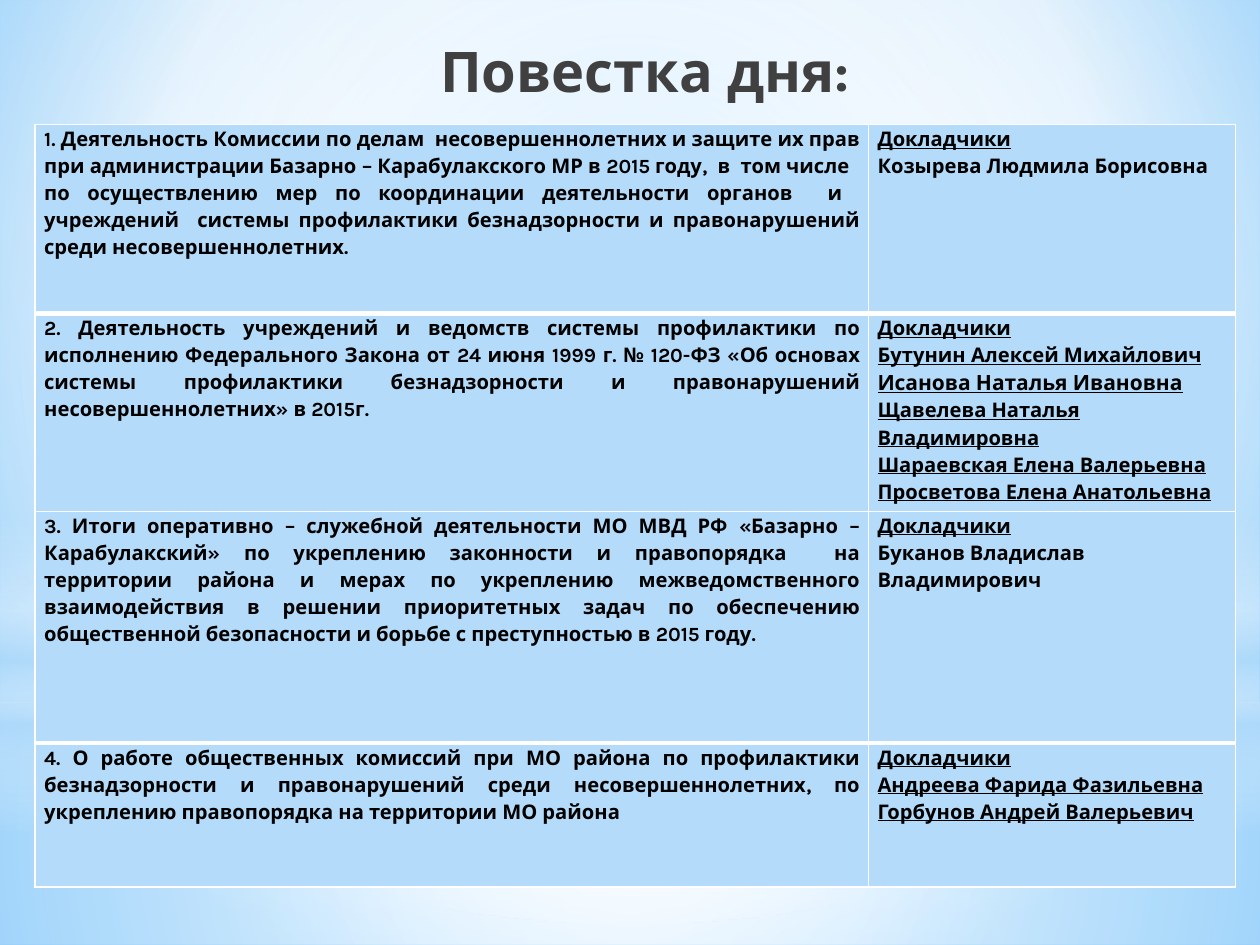
from lxml import etree
from pptx import Presentation
from pptx import util as u
from pptx.dml.color import RGBColor
from pptx.enum import shapes, text
from pptx.oxml import ns

FONT = "Karla"
WHITE, PALE_BLUE, BLACK = "FFFFFF", "B4DCFA", "000000"
CENTRE = (50, 50, 50, 50)
LEFT, JUSTIFY = text.PP_ALIGN.LEFT, text.PP_ALIGN.JUSTIFY
SPEAKERS = "Докладчики"

COLUMN_WIDTHS = (16.8, 7.4)
ROW_HEIGHTS = (3.81, 3.99, 4.67, 2.9)
RULE_WIDTHS = (1, 3, 1, 3, 1)

# Topic, then speakers as (name, alignment, format that differs)
UNDERLINED = {"underline": True}
AGENDA = [
    ("1. Деятельность Комиссии по делам  несовершеннолетних и защите их прав при "
     "администрации Базарно – Карабулакского МР в 2015 году,  в  том числе   по "
     "осуществлению мер по координации деятельности органов  и  учреждений  системы "
     "профилактики безнадзорности и правонарушений среди несовершеннолетних.",
     [("Козырева Людмила Борисовна", LEFT, {})]),
    ("2. Деятельность учреждений и ведомств системы профилактики по исполнению "
     "Федерального Закона от 24 июня 1999 г. № 120-ФЗ «Об основах системы профилактики "
     "безнадзорности и правонарушений несовершеннолетних» в 2015г.",
     [("Бутунин Алексей Михайлович", JUSTIFY, UNDERLINED),
      ("Исанова Наталья Ивановна", LEFT, {"underline": True, "size": u.Pt(12)}),
      ("Щавелева Наталья Владимировна", LEFT, UNDERLINED),
      ("Шараевская Елена Валерьевна", LEFT, UNDERLINED),
      ("Просветова Елена Анатольевна", LEFT, UNDERLINED)]),
    ("3. Итоги оперативно – служебной деятельности МО МВД РФ «Базарно – Карабулакский» "
     "по укреплению законности и правопорядка  на территории района и мерах по "
     "укреплению межведомственного взаимодействия в решении приоритетных задач по "
     "обеспечению общественной безопасности и борьбе с преступностью в 2015 году.",
     [("Буканов Владислав Владимирович", LEFT, {})]),
    ("4. О работе общественных комиссий при МО района по профилактики безнадзорности и "
     "правонарушений среди несовершеннолетних, по укреплению правопорядка на "
     "территории МО района",
     [("Андреева Фарида Фазильевна", JUSTIFY, UNDERLINED),
      ("Горбунов Андрей Валерьевич", JUSTIFY, UNDERLINED)]),
]

# Preset, box in cm, stops as (position, colour, opacity), focus of a radial gradient
GLOWS = [
    (shapes.MSO_SHAPE.RECTANGLE, (0, 14.17, 25.4, 4.88),
     [(0, WHITE, 91), (37, WHITE, 76), (100, PALE_BLUE, 79)], CENTRE),
    (shapes.MSO_SHAPE.RECTANGLE, (0, 0, 25.4, 14.17),
     [(0, WHITE, 89), (48, WHITE, 62), (100, PALE_BLUE, 79)], CENTRE),
    (shapes.MSO_SHAPE.RECTANGLE, (0, 10.46, 25.4, 6.35),
     [(0, WHITE, 0), (29, WHITE, 30), (45, PALE_BLUE, 40),
      (55, WHITE, 26), (65, PALE_BLUE, 60), (100, WHITE, 0)], None),
    (shapes.MSO_SHAPE.OVAL, (0, 4.45, 25.4, 14.17),
     [(0, WHITE, 100), (56, WHITE, 0)], CENTRE),
]


def colour(value):
    return RGBColor.from_string(value)


def set_attributes(target, values):
    for name, value in values.items():
        setattr(target, name, value)


def add_node(parent, tag, **attributes):
    node = etree.SubElement(parent, ns.qn(tag))
    for name, value in attributes.items():
        node.set(name, str(value))
    return node


def set_gradient(fill, owner, stops, focus):
    """Radial around the focus rectangle, or top to bottom when focus is None."""
    fill.gradient()
    gradient = next(owner.iter(ns.qn("a:gradFill")))
    for child in list(gradient):
        gradient.remove(child)
    stop_list = add_node(gradient, "a:gsLst")
    for position, value, opacity in stops:
        stop = add_node(stop_list, "a:gs", pos=position * 1000)
        shade = add_node(stop, "a:srgbClr", val=value)
        if opacity < 100:
            add_node(shade, "a:alpha", val=opacity * 1000)
    if focus is None:
        add_node(gradient, "a:lin", ang=5400000, scaled=0)
    else:
        radial = add_node(gradient, "a:path", path="circle")
        sides = {side: value * 1000 for side, value in zip("ltrb", focus)}
        add_node(radial, "a:fillToRect", **sides)


def add_backdrop(slide):
    stops = [(0, "9ED5FF", 100), (60, WHITE, 100), (100, "5BB9FF", 100)]
    set_gradient(slide.background.fill, slide.element, stops, (20, 10, 20, 60))
    for preset, box, glow_stops, focus in GLOWS:
        shape = slide.shapes.add_shape(preset, *map(u.Cm, box))
        shape.shadow.inherit = False
        shape.line.fill.background()
        set_gradient(shape.fill, shape.element, glow_stops, focus)


def write_line(paragraph, words, alignment, font_format, font_colour=BLACK):
    paragraph.alignment = alignment
    run = paragraph.add_run()
    run.text = words
    set_attributes(run.font, {"name": FONT, "bold": True, **font_format})
    run.font.color.rgb = colour(font_colour)


def add_title(slide, box):
    frame = slide.shapes.add_textbox(*map(u.Cm, box)).text_frame
    set_attributes(frame, {"word_wrap": True, "margin_top": 0, "margin_bottom": 0,
                           "vertical_anchor": text.MSO_ANCHOR.TOP})
    write_line(frame.paragraphs[0], "Повестка дня:", text.PP_ALIGN.CENTER,
               {"size": u.Pt(32)}, "404040")


def set_borders(cell, top, bottom):
    properties = cell._tc.get_or_add_tcPr()
    widths = {"a:lnL": 1, "a:lnR": 1, "a:lnT": top, "a:lnB": bottom}
    for index, (tag, width) in enumerate(widths.items()):
        line = add_node(properties, tag, w=u.Pt(width))
        add_node(add_node(line, "a:solidFill"), "a:srgbClr", val=WHITE)
        properties.insert(index, line)


def fill_cell(cell, lines, top, bottom):
    set_attributes(cell, {"margin_left": u.Cm(0.18), "margin_right": u.Cm(0.18),
                          "margin_top": 0, "margin_bottom": 0})
    cell.fill.solid()
    cell.fill.fore_color.rgb = colour(PALE_BLUE)
    set_borders(cell, top, bottom)
    frame = cell.text_frame
    for index, (words, alignment, font_format) in enumerate(lines):
        paragraph = frame.add_paragraph() if index else frame.paragraphs[0]
        paragraph.line_spacing = 1.15
        write_line(paragraph, words, alignment, {"size": u.Pt(11.5), **font_format})


def add_agenda(slide, left, top):
    size = (sum(COLUMN_WIDTHS), sum(ROW_HEIGHTS))
    table = slide.shapes.add_table(len(AGENDA), len(COLUMN_WIDTHS),
                                   *map(u.Cm, (left, top, *size))).table
    set_attributes(table, {"first_row": False, "horz_banding": False})
    for column, width in zip(table.columns, COLUMN_WIDTHS):
        column.width = u.Cm(width)
    for index, (topic, speakers) in enumerate(AGENDA):
        table.rows[index].height = u.Cm(ROW_HEIGHTS[index])
        rules = RULE_WIDTHS[index:index + 2]
        fill_cell(table.cell(index, 0), [(topic, JUSTIFY, {})], *rules)
        heading = (SPEAKERS, JUSTIFY, UNDERLINED)
        fill_cell(table.cell(index, 1), [heading, *speakers], *rules)


def main():
    presentation = Presentation()
    set_attributes(presentation, {"slide_width": u.Cm(25.4), "slide_height": u.Cm(19.05)})
    slide = presentation.slides.add_slide(presentation.slide_layouts[6])
    add_backdrop(slide)
    add_title(slide, (1.5, 0.74, 23.01, 2.01))
    add_agenda(slide, 0.71, 2.51)
    presentation.save("out.pptx")


if __name__ == "__main__":
    main()
